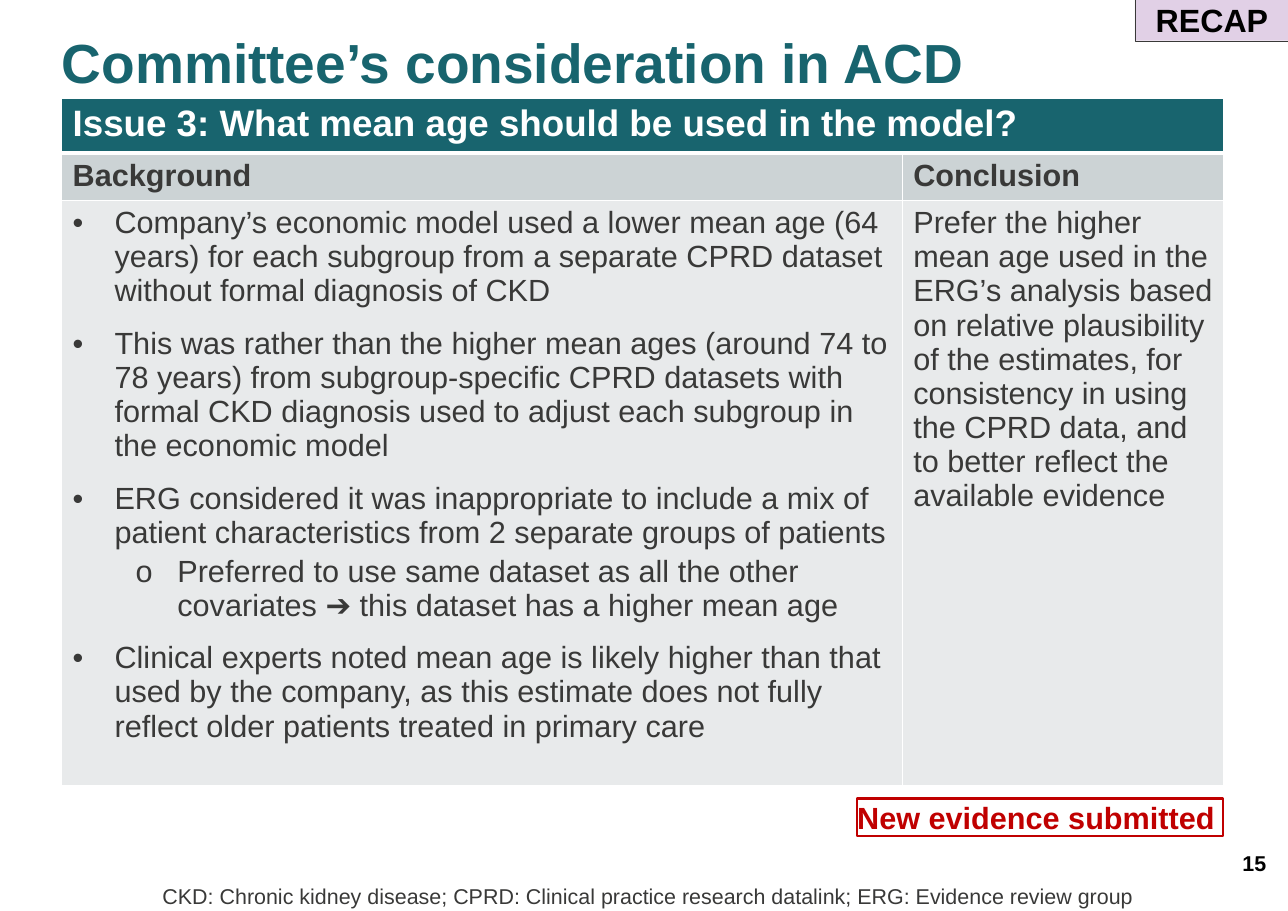
from dataclasses import dataclass

from lxml.etree import SubElement
from pptx import Presentation
from pptx.dml.color import RGBColor
from pptx.enum.shapes import MSO_SHAPE
from pptx.enum.text import MSO_ANCHOR, MSO_AUTO_SIZE, PP_ALIGN
from pptx.oxml.ns import qn
from pptx.util import Inches, Pt


@dataclass(frozen=True)
class Theme:
    font: str = "Arial"
    teal: str = "18646E"
    ink: str = "393938"
    black: str = "000000"
    white: str = "FFFFFF"
    red: str = "C00000"
    lilac: str = "E1D0E6"
    head: str = "CCD3D5"
    body: str = "E8EAEB"
    title: int = 36
    issue: int = 24
    tag: int = 21
    text: int = 20
    small: int = 14


BULLETS = [  # text, level, space after
    ("Company’s economic model used a lower mean age (64 years) for each subgroup "
     "from a separate CPRD dataset without formal diagnosis of CKD", 0, 12),
    ("This was rather than the higher mean ages (around 74 to 78 years) from "
     "subgroup-specific CPRD datasets with formal CKD diagnosis used to adjust each "
     "subgroup in the economic model", 0, 12),
    ("ERG considered it was inappropriate to include a mix of patient "
     "characteristics from 2 separate groups of patients", 0, 3),
    ("Preferred to use same dataset as all the other covariates ➔ this dataset has "
     "a higher mean age", 1, 12),
    ("Clinical experts noted mean age is likely higher than that used by the "
     "company, as this estimate does not fully reflect older patients treated in "
     "primary care", 0, 18),
]
VERDICT = ("Prefer the higher mean age used in the ERG’s analysis based on relative "
           "plausibility of the estimates, for consistency in using the CPRD data, "
           "and to better reflect the available evidence")


class Deck:
    def __init__(self, theme, width, height):
        self.theme = theme
        self.prs = Presentation()
        self.prs.slide_width, self.prs.slide_height = Inches(width), Inches(height)
        self.slide = self.prs.slides.add_slide(self.prs.slide_layouts[5])

    def run(self, para, text, size, color, bold=False):
        run = para.add_run()
        run.text = text
        font = run.font
        font.name, font.size, font.bold = self.theme.font, Pt(size), bold
        font.color.rgb = RGBColor.from_string(color)

    def frame(self, shape, anchor=MSO_ANCHOR.TOP, align=PP_ALIGN.LEFT):
        """Clear the margins, set the alignment and return the first paragraph."""
        frame = shape.text_frame
        frame.word_wrap, frame.auto_size = True, MSO_AUTO_SIZE.NONE
        frame.vertical_anchor = anchor
        frame.margin_left = frame.margin_right = 0
        frame.margin_top = frame.margin_bottom = 0
        para = frame.paragraphs[0]
        para.alignment = align
        return para

    def title(self, box, text):
        shape = self.slide.shapes.title
        shape.left, shape.top, shape.width, shape.height = map(Inches, box)
        para = self.frame(shape)
        para.line_spacing = Pt(42)
        self.run(para, text, self.theme.title, self.theme.teal, True)

    def label(self, box, text, color, bold=False, anchor=MSO_ANCHOR.TOP):
        shape = self.slide.shapes.add_textbox(*map(Inches, box))
        para = self.frame(shape, anchor, PP_ALIGN.CENTER)
        self.run(para, text, self.theme.small, color, bold)

    def badge(self, box, text, size, color, line, weight, fill=None,
              anchor=MSO_ANCHOR.TOP, align=PP_ALIGN.LEFT):
        shape = self.slide.shapes.add_shape(MSO_SHAPE.RECTANGLE, *map(Inches, box))
        shape.shadow.inherit = False
        if fill:
            shape.fill.solid()
            shape.fill.fore_color.rgb = RGBColor.from_string(fill)
        else:
            shape.fill.background()
        shape.line.color.rgb = RGBColor.from_string(line)
        shape.line.width = Pt(weight)
        self.run(self.frame(shape, anchor, align), text, size, color, True)

    def table(self, left, top, cols, rows):
        shape = self.slide.shapes.add_table(
            len(rows), len(cols), Inches(left), Inches(top),
            Inches(sum(cols)), Inches(sum(rows)))
        table = shape.table
        table.first_row = table.horz_banding = False
        for col, width in zip(table.columns, cols):
            col.width = Inches(width)
        for row, height in zip(table.rows, rows):
            row.height = Inches(height)
        return table

    def paint(self, cell, fill, top=1, bottom=1):
        """Give a cell its fill and white borders."""
        props = cell._tc.get_or_add_tcPr()
        for side, width in (("L", 1), ("R", 1), ("T", top), ("B", bottom)):
            line = SubElement(props, qn("a:ln" + side), w=str(Pt(width)))
            solid = SubElement(line, qn("a:solidFill"))
            SubElement(solid, qn("a:srgbClr"), val=self.theme.white)
        cell.fill.solid()
        cell.fill.fore_color.rgb = RGBColor.from_string(fill)

    def entry(self, cell, text, size, color, bold=False):
        self.run(cell.text_frame.paragraphs[0], text, size, color, bold)

    def bullets(self, cell, items):
        frame = cell.text_frame
        for num, (text, level, after) in enumerate(items):
            para = frame.add_paragraph() if num else frame.paragraphs[0]
            para.level = level
            props = para._p.get_or_add_pPr()
            props.set("marL", str(Inches((0.38, 0.95)[level])))
            props.set("indent", str(Inches(-0.38)))
            SubElement(props, qn("a:buFont"), typeface=self.theme.font)
            SubElement(props, qn("a:buChar"), char="•o"[level])
            para.space_after = Pt(after)
            self.run(para, text, self.theme.text, self.theme.ink)


def main():
    look = Theme()
    deck = Deck(look, 11.69, 8.27)
    deck.title((0.56, 0.27, 10.87, 0.65), "Committee’s consideration in ACD")

    table = deck.table(0.56, 0.89, (7.63, 2.92), (0.5, 0.43, 5.31))
    fills = (look.teal, look.head, look.body)
    edges = (1, 3, 1, 1)
    for row, fill in enumerate(fills):
        for col in range(2):
            deck.paint(table.cell(row, col), fill, edges[row], edges[row + 1])
    issue = table.cell(0, 0)
    issue.merge(table.cell(0, 1))
    deck.entry(issue, "Issue 3: What mean age should be used in the model?",
               look.issue, look.white, True)
    for col, name in enumerate(("Background", "Conclusion")):
        deck.entry(table.cell(1, col), name, look.text, look.ink, True)
    deck.bullets(table.cell(2, 0), BULLETS)
    deck.entry(table.cell(2, 1), VERDICT, look.text, look.ink)

    deck.badge((10.3, -0.01, 1.4, 0.38), "RECAP", look.tag, look.black, look.ink,
               0.25, look.lilac, MSO_ANCHOR.MIDDLE, PP_ALIGN.CENTER)
    deck.label((11.11, 7.59, 0.55, 0.36), "15", look.black, True, MSO_ANCHOR.BOTTOM)
    deck.label((1.37, 8.02, 9.03, 0.24),
               "CKD: Chronic kidney disease; CPRD: Clinical practice research "
               "datalink; ERG: Evidence review group", look.ink)
    deck.badge((7.78, 7.25, 3.32, 0.34), "New evidence submitted", look.text,
               look.red, look.red, 1.5)
    deck.prs.save("out.pptx")


if __name__ == "__main__":
    main()
